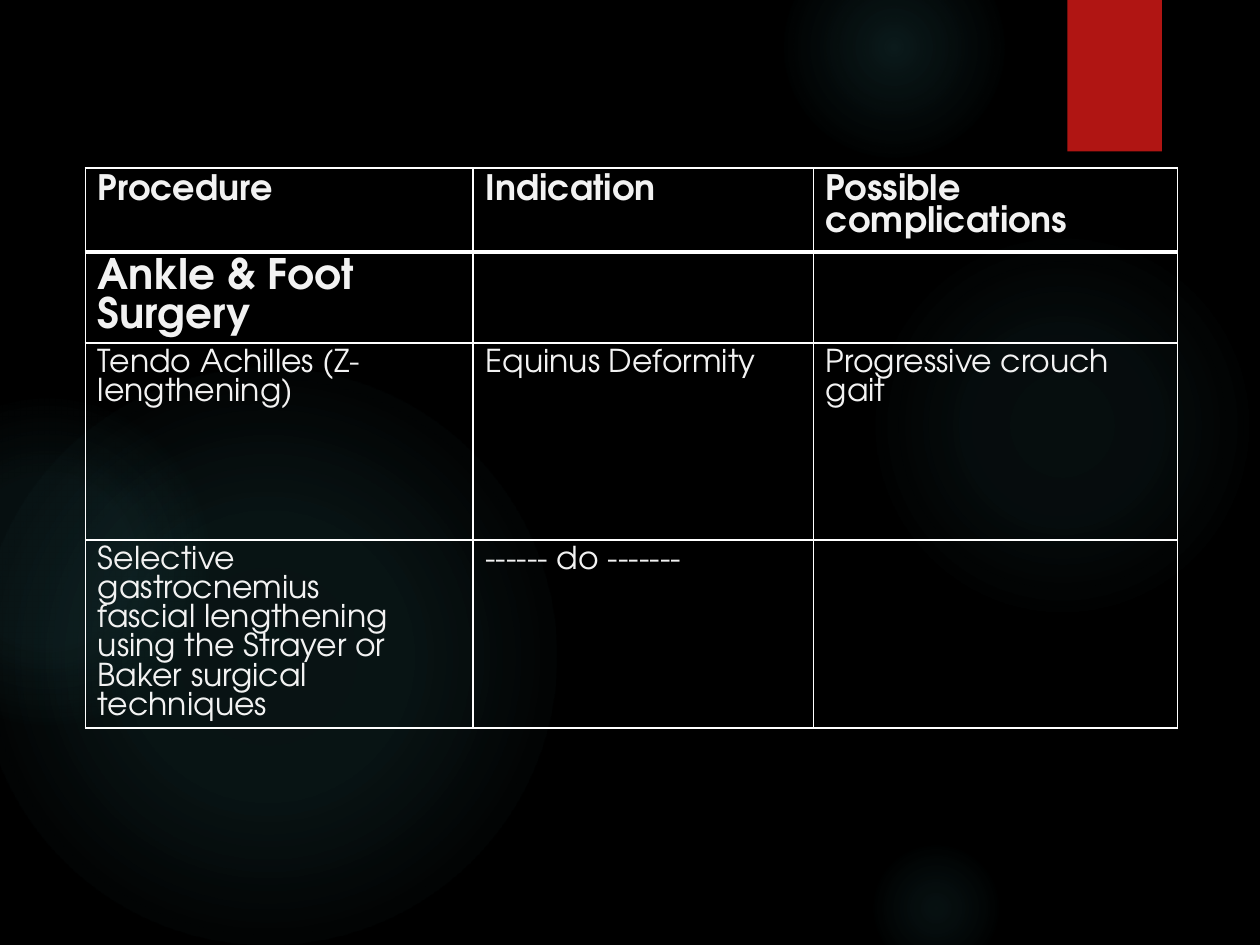
from lxml import etree
from pptx import Presentation
from pptx.dml.color import RGBColor
from pptx.enum.shapes import MSO_SHAPE
from pptx.oxml import parse_xml
from pptx.oxml.ns import nsdecls, qn
from pptx.util import Pt

OVAL = MSO_SHAPE.OVAL
RECT = MSO_SHAPE.RECTANGLE
FONT = "TeX Gyre Adventor"
WHITE, GLOW = "FFFFFF", "50B9C1"


def color(code):
    return RGBColor.from_string(code)


def border(cell, side, width):
    props = cell._tc.get_or_add_tcPr()
    line = etree.SubElement(props, qn("a:ln" + side), w=str(Pt(width)))
    fill = etree.SubElement(line, qn("a:solidFill"))
    etree.SubElement(fill, qn("a:srgbClr"), val=WHITE)


prs = Presentation()
prs.slide_width, prs.slide_height = Pt(720), Pt(540)
slide = prs.slides.add_slide(prs.slide_layouts[6])
back = slide.background.fill
back.solid()
back.fore_color.rgb = color("000000")

# Soft glows: left, top, size, then (position, opacity) stops in percent
glows = [
    (496, 132, 222, [(0, 7), (36, 6), (69, 0)]),
    (448, -36, 126, [(0, 14), (36, 7), (73, 0)]),
    (496, 480, 78, [(0, 9), (36, 5), (66, 0)]),
    (-12, 210, 330, [(0, 11), (36, 10), (75, 0)]),
    (-66, 228, 186, [(0, 8), (36, 8), (72, 0)]),
]
for left, top, size, stops in glows:
    glow = slide.shapes.add_shape(OVAL, Pt(left), Pt(top), Pt(size), Pt(size))
    glow.shadow.inherit = False
    glow.line.fill.background()
    marks = "".join(
        f'<a:gs pos="{pos * 1000}"><a:srgbClr val="{GLOW}">'
        f'<a:alpha val="{alpha * 1000}"/></a:srgbClr></a:gs>'
        for pos, alpha in stops
    )
    grad = parse_xml(
        f'<a:gradFill {nsdecls("a")}><a:gsLst>{marks}</a:gsLst>'
        '<a:path path="circle"><a:fillToRect l="50000" t="50000" '
        'r="50000" b="50000"/></a:path></a:gradFill>'
    )
    glow._element.spPr.find(qn("a:prstGeom")).addnext(grad)

# Red tab
tab = slide.shapes.add_shape(RECT, Pt(610), Pt(0), Pt(54), Pt(86.5))
tab.shadow.inherit = False
tab.fill.solid()
tab.fill.fore_color.rgb = color("B01513")
tab.line.fill.background()

# Table of procedures
cols = [221.5, 194.5, 208]
rows = [48, 52, 112.5, 107.5]
sizes = [20, 24, 18, 18]
texts = [
    ["Procedure", "Indication", "Possible complications"],
    ["Ankle & Foot Surgery", "", ""],
    ["Tendo Achilles (Z-lengthening)", "Equinus Deformity",
     "Progressive crouch\ngait"],
    ["Selective gastrocnemius\nfascial lengthening using the Strayer or "
     "Baker surgical techniques", "------ do -------", ""],
]
frame = slide.shapes.add_table(
    len(rows), len(cols), Pt(48.75), Pt(96), Pt(sum(cols)), Pt(sum(rows)))
table = frame.table
table.first_row = table.horz_banding = False
for col, width in zip(table.columns, cols):
    col.width = Pt(width)
for i, height in enumerate(rows):
    table.rows[i].height = Pt(height)
    for cell, text in zip(table.rows[i].cells, texts[i]):
        for side in "LRTB":
            heavy = (i, side) in [(0, "B"), (1, "T")]
            border(cell, side, 3 if heavy else 1)
        cell.fill.background()
        cell.text = text
        for para in cell.text_frame.paragraphs:
            para.line_spacing = Pt(round(sizes[i] * 0.93, 1))
            para.font.name = FONT
            para.font.size = Pt(sizes[i])
            para.font.bold = i < 2
            para.font.color.rgb = color("F2F2F2")

prs.save("out.pptx")
